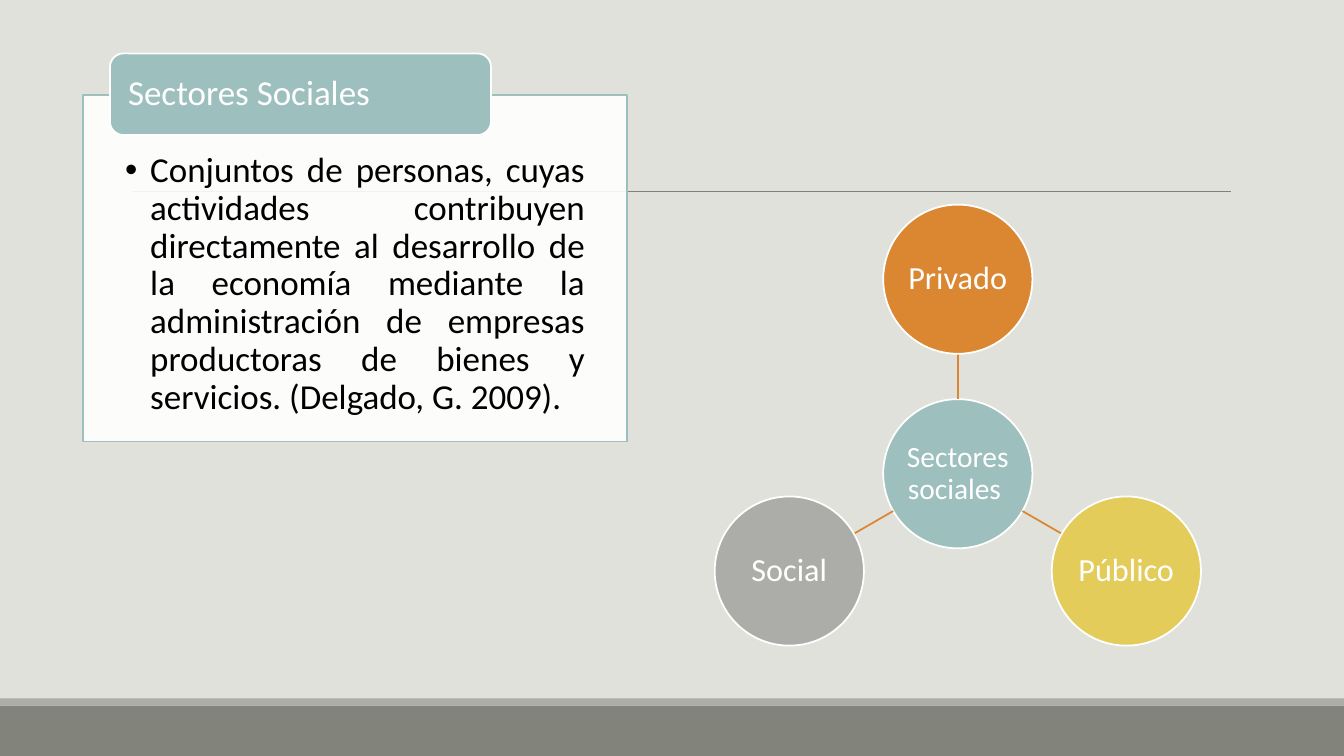
import math
from dataclasses import dataclass

from lxml import etree
from pptx import Presentation
from pptx import util as u
from pptx.dml.color import RGBColor
from pptx.enum import shapes, text
from pptx.oxml.ns import qn

COLORS = {
    "background": "E1E1DB", "footer": "82847C", "stripe": "ACADA8",
    "rule": "808080", "teal": "9DBFBE", "orange": "DB8631",
    "yellow": "E3CC5A", "gray": "ACADA8", "white": "FFFFFF", "black": "000000",
}
FONT = "Calibri"
CENTER_X, CENTER_Y = 9.5, 4.7
ORBIT, NODE_RADIUS = 1.93, 0.74


@dataclass
class Sector:
    name: str
    color: str
    angle: float


SECTORS = [
    Sector("Privado", "orange", -90),
    Sector("Público", "yellow", 30),
    Sector("Social", "gray", 150),
]


def rgb(color: str) -> RGBColor:
    return RGBColor.from_string(COLORS[color])


def orbit_point(angle: float, distance: float) -> tuple[float, float]:
    """Point at a distance from the hub, with the angle in degrees clockwise."""
    radians = math.radians(angle)
    return CENTER_X + distance * math.cos(radians), CENTER_Y + distance * math.sin(radians)


def place(shape, left: float, top: float, width: float, height: float) -> None:
    shape.left, shape.top = u.Inches(left), u.Inches(top)
    shape.width, shape.height = u.Inches(width), u.Inches(height)


def paint(shape, fill: str, line: str | None = None) -> None:
    shape.fill.solid()
    shape.fill.fore_color.rgb = rgb(fill)
    if line:
        shape.line.color.rgb = rgb(line)
        shape.line.width = u.Pt(1.25)
    else:
        shape.line.fill.background()


def add_box(slide, kind, left: float, top: float, width: float, height: float,
            fill: str, line: str | None = None):
    shape = slide.shapes.add_shape(kind, *map(u.Inches, (left, top, width, height)))
    shape.shadow.inherit = False
    paint(shape, fill, line)
    return shape


def add_line(slide, start: tuple[float, float], end: tuple[float, float],
             color: str, width: float) -> None:
    connector = slide.shapes.add_connector(
        shapes.MSO_CONNECTOR.STRAIGHT, *map(u.Inches, (*start, *end)))
    connector.line.color.rgb = rgb(color)
    connector.line.width = u.Pt(width)
    etree.SubElement(connector.element.spPr, qn("a:effectLst"))


def write(shape, words: str, *, size: float, color: str = "white",
          align=text.PP_ALIGN.CENTER, anchor=text.MSO_ANCHOR.MIDDLE,
          insets: tuple[float, float, float, float] = (0.02, 0.02, 0.02, 0.02)):
    frame = shape.text_frame
    frame.word_wrap = True
    frame.auto_size = text.MSO_AUTO_SIZE.NONE
    frame.vertical_anchor = anchor
    (frame.margin_left, frame.margin_top,
     frame.margin_right, frame.margin_bottom) = map(u.Inches, insets)
    paragraph = frame.paragraphs[0]
    paragraph.alignment = align
    paragraph.line_spacing = 0.9
    paragraph.space_before = u.Pt(0)
    run = paragraph.add_run()
    run.text = words
    run.font.name, run.font.size = FONT, u.Pt(size)
    run.font.color.rgb = rgb(color)
    return paragraph


def add_bullet(paragraph, indent: float) -> None:
    properties = paragraph._p.get_or_add_pPr()
    properties.set("marL", str(u.Inches(indent)))
    properties.set("indent", str(-u.Inches(indent)))
    etree.SubElement(properties, qn("a:buFont"), typeface="Arial")
    etree.SubElement(properties, qn("a:buChar"), char="•")


def bring_to_front(shape) -> None:
    shape.element.getparent().append(shape.element)


def add_background(slide) -> None:
    slide.background.fill.solid()
    slide.background.fill.fore_color.rgb = rgb("background")
    rectangle = shapes.MSO_SHAPE.RECTANGLE
    add_box(slide, rectangle, 0, 7, 13.33, 0.5, "footer")
    add_box(slide, rectangle, 0, 6.93, 13.33, 0.07, "stripe")
    add_line(slide, (1.31, 1.9), (12.21, 1.9), "rule", 0.5)


def add_definition(slide) -> None:
    title, body = slide.shapes.title, slide.placeholders[1]
    place(body, 0.82, 0.94, 5.4, 3.44)
    paint(body, "white", "teal")
    fill_color = body.element.spPr.find(f"{qn('a:solidFill')}/{qn('a:srgbClr')}")
    etree.SubElement(fill_color, qn("a:alpha"), val="90000")
    paragraph = write(
        body,
        "Conjuntos de personas, cuyas actividades contribuyen directamente al "
        "desarrollo de la economía mediante la administración de empresas "
        "productoras de bienes y servicios. (Delgado, G. 2009).",
        size=25, color="black", align=text.PP_ALIGN.JUSTIFY,
        anchor=text.MSO_ANCHOR.TOP, insets=(0.42, 0.57, 0.42, 0.19))
    add_bullet(paragraph, 0.25)
    bring_to_front(body)

    add_box(slide, shapes.MSO_SHAPE.ROUNDED_RECTANGLE,
            1.09, 0.53, 3.78, 0.81, "teal", "white")
    place(title, 1.13, 0.57, 3.7, 0.73)
    write(title, "Sectores Sociales", size=25, align=text.PP_ALIGN.LEFT,
          insets=(0.14, 0, 0.14, 0))
    bring_to_front(title)


def add_node(slide, center: tuple[float, float], name: str, color: str, size: float) -> None:
    x, y = center
    node = add_box(slide, shapes.MSO_SHAPE.OVAL, x - NODE_RADIUS, y - NODE_RADIUS,
                   2 * NODE_RADIUS, 2 * NODE_RADIUS, color, "white")
    write(node, name, size=size, insets=(0.01, 0.01, 0.01, 0.01))


def add_sector_diagram(slide) -> None:
    add_node(slide, (CENTER_X, CENTER_Y), "Sectores sociales ", "teal", 21)
    for sector in SECTORS:
        add_line(slide, orbit_point(sector.angle, NODE_RADIUS),
                 orbit_point(sector.angle, ORBIT - NODE_RADIUS), "orange", 1.25)
        add_node(slide, orbit_point(sector.angle, ORBIT), sector.name, sector.color, 23)


def main() -> None:
    presentation = Presentation()
    presentation.slide_width, presentation.slide_height = u.Inches(13.33), u.Inches(7.5)
    slide = presentation.slides.add_slide(presentation.slide_layouts[1])
    add_background(slide)
    add_definition(slide)
    add_sector_diagram(slide)
    presentation.save("out.pptx")


if __name__ == "__main__":
    main()
